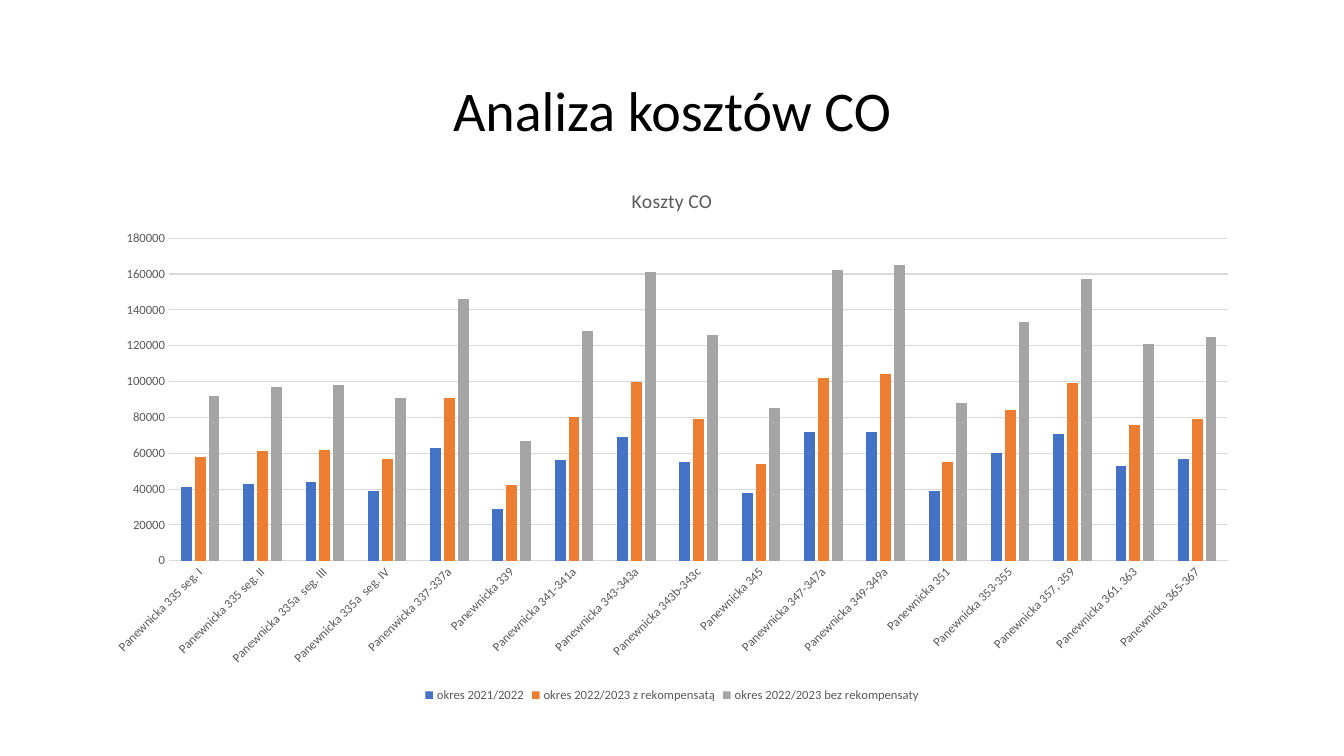
from pptx import Presentation
from pptx import util as u
from pptx.chart import data as cd
from pptx.dml.color import RGBColor
from pptx.enum import chart as ch, text

PX = 9525
FACE = "Calibri"
BLACK = RGBColor(0x00, 0x00, 0x00)
GREY = RGBColor(0x59, 0x59, 0x59)
PALE = RGBColor(0xD9, 0xD9, 0xD9)
BLUE = RGBColor(0x44, 0x72, 0xC4)
RUST = RGBColor(0xED, 0x7D, 0x31)
ASH = RGBColor(0xA5, 0xA5, 0xA5)


def style(font, size, color):
    font.name = FACE
    font.size = u.Pt(size)
    font.bold = False
    font.color.rgb = color


def rule(line):
    line.color.rgb = PALE
    line.width = u.Pt(0.75)


deck = Presentation()
deck.slide_width, deck.slide_height = 1280 * PX, 720 * PX
slide = deck.slides.add_slide(deck.slide_layouts[5])

title = slide.shapes.title
title.left, title.top, title.width, title.height = [n * PX for n in (88, 38, 1104, 139)]
frame = title.text_frame
frame.word_wrap = True
frame.vertical_anchor = text.MSO_ANCHOR.MIDDLE
para = frame.paragraphs[0]
para.alignment = text.PP_ALIGN.CENTER
para.line_spacing = 0.9
run = para.add_run()
run.text = "Analiza kosztów CO"
style(run.font, 40, BLACK)

costs = [
    ("335 seg. I", 41000, 58000, 92000),
    ("335 seg. II", 43000, 61000, 97000),
    ("335a  seg. III", 44000, 62000, 98000),
    ("335a  seg. IV", 39000, 57000, 91000),
    ("337-337a", 63000, 91000, 146000),
    ("339", 29000, 42000, 67000),
    ("341-341a", 56000, 80000, 128000),
    ("343-343a", 69000, 100000, 161000),
    ("343b-343c", 55000, 79000, 126000),
    ("345", 38000, 54000, 85000),
    ("347-347a", 72000, 102000, 162000),
    ("349-349a", 72000, 104000, 165000),
    ("351", 39000, 55000, 88000),
    ("353-355", 60000, 84000, 133000),
    ("357, 359", 71000, 99000, 157000),
    ("361, 363", 53000, 76000, 121000),
    ("365-367", 57000, 79000, 125000),
]
terms = [
    ("okres 2021/2022", BLUE),
    ("okres 2022/2023 z rekompensatą", RUST),
    ("okres 2022/2023 bez rekompensaty", ASH),
]
data = cd.CategoryChartData(number_format="General")
data.categories = [
    ("Panenwicka " if row[0] == "337-337a" else "Panewnicka ") + row[0] for row in costs
]
for col, (name, color) in enumerate(terms, 1):
    data.add_series(name, [row[col] for row in costs])

chart = slide.shapes.add_chart(
    ch.XL_CHART_TYPE.COLUMN_CLUSTERED, *[n * PX for n in (88, 160, 1104, 513)], data
).chart
style(chart.font, 10, BLACK)

chart.has_title = True
chart.chart_title.include_in_layout = False
run = chart.chart_title.text_frame.paragraphs[0].add_run()
run.text = "Koszty CO"
style(run.font, 14, GREY)

chart.has_legend = True
chart.legend.position = ch.XL_LEGEND_POSITION.BOTTOM
chart.legend.include_in_layout = False
style(chart.legend.font, 9, GREY)

plot = chart.plots[0]
plot.gap_width = 219
plot.overlap = -27
plot.vary_by_categories = False
for series, (name, color) in zip(plot.series, terms):
    series.invert_if_negative = False
    series.format.fill.solid()
    series.format.fill.fore_color.rgb = color

base, scale = chart.category_axis, chart.value_axis
for axis in (base, scale):
    axis.major_tick_mark = axis.minor_tick_mark = ch.XL_TICK_MARK.NONE
    style(axis.tick_labels.font, 9, GREY)
rule(base.format.line)
base.has_major_gridlines = False
base._element.txPr.bodyPr.set("rot", "-2700000")

scale.minimum_scale = 0
scale.maximum_scale = 180000
scale.major_unit = 20000
scale.format.line.fill.background()
scale.has_major_gridlines = True
rule(scale.major_gridlines.format.line)

deck.save("out.pptx")
